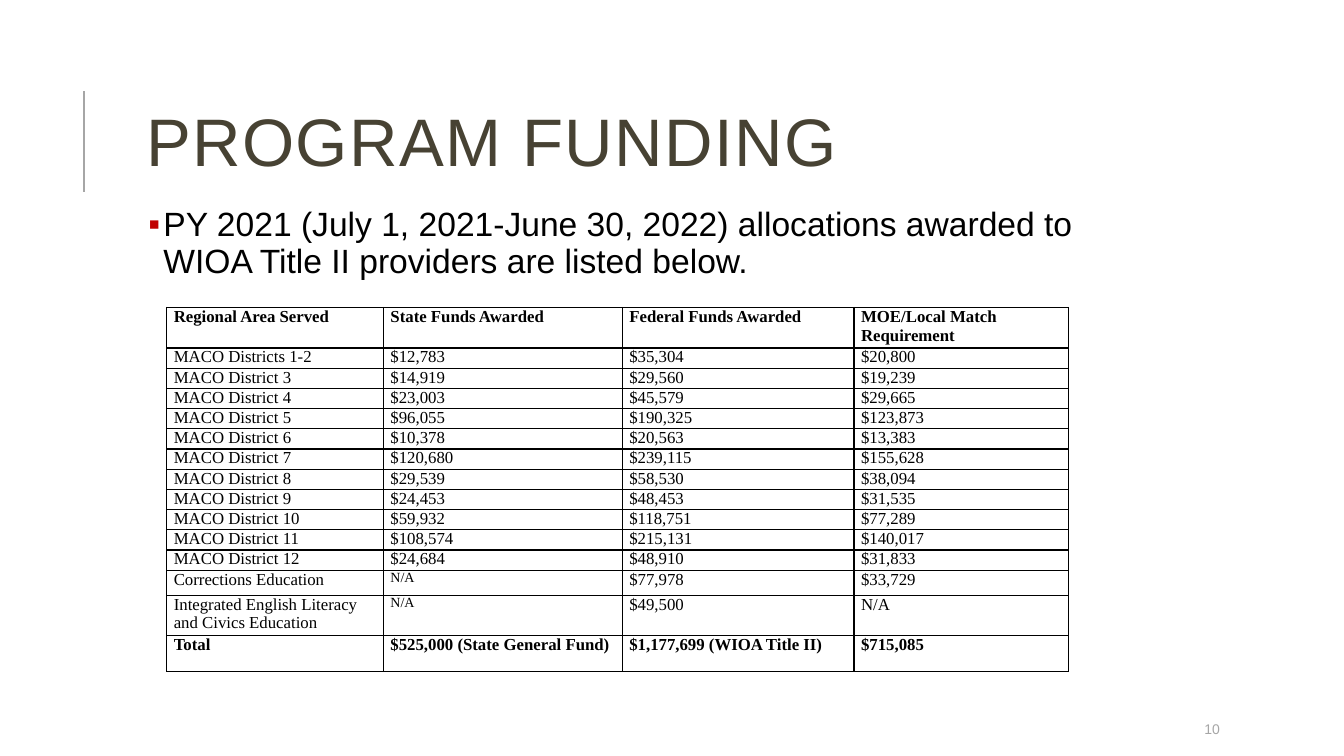
from lxml import etree
from pptx import Presentation
from pptx.dml.color import RGBColor
from pptx.enum.shapes import MSO_CONNECTOR
from pptx.enum.text import MSO_ANCHOR, MSO_AUTO_SIZE, PP_ALIGN
from pptx.oxml import parse_xml
from pptx.oxml.ns import nsdecls, qn
from pptx.util import Cm, Pt

STRAIGHT = MSO_CONNECTOR.STRAIGHT
MIDDLE = MSO_ANCHOR.MIDDLE
TOP = MSO_ANCHOR.TOP
LEFT = PP_ALIGN.LEFT
NO_AUTOFIT = MSO_AUTO_SIZE.NONE

BLACK = RGBColor(0x00, 0x00, 0x00)
BROWN = RGBColor(0x47, 0x42, 0x33)
GRAY = RGBColor(0xA6, 0xA6, 0xA6)

FUNDING = [
    ("Regional Area Served", "State Funds Awarded", "Federal Funds Awarded",
     "MOE/Local Match Requirement"),
    ("MACO Districts 1-2", "$12,783", "$35,304", "$20,800"),
    ("MACO District 3", "$14,919", "$29,560", "$19,239"),
    ("MACO District 4", "$23,003", "$45,579", "$29,665"),
    ("MACO District 5", "$96,055", "$190,325", "$123,873"),
    ("MACO District 6", "$10,378", "$20,563", "$13,383"),
    ("MACO District 7", "$120,680", "$239,115", "$155,628"),
    ("MACO District 8", "$29,539", "$58,530", "$38,094"),
    ("MACO District 9", "$24,453", "$48,453", "$31,535"),
    ("MACO District 10", "$59,932", "$118,751", "$77,289"),
    ("MACO District 11", "$108,574", "$215,131", "$140,017"),
    ("MACO District 12", "$24,684", "$48,910", "$31,833"),
    ("Corrections Education", "N/A", "$77,978", "$33,729"),
    ("Integrated English Literacy and Civics Education", "N/A", "$49,500", "N/A"),
    ("Total", "$525,000 (State General Fund)", "$1,177,699 (WIOA Title II)",
     "$715,085"),
]
COLUMN_WIDTHS = [5.46, 6.02, 5.84, 5.41]
ROW_HEIGHTS = [0.91] + [0.46] * 11 + [0.63, 0.91, 0.91]


def add_run(paragraph, text, font_name, size, color, bold=False):
    run = paragraph.add_run()
    run.text = text
    run.font.name = font_name
    run.font.size = Pt(size)
    run.font.color.rgb = color
    run.font.bold = bold
    return run


presentation = Presentation()
presentation.slide_width = Cm(33.87)
presentation.slide_height = Cm(19.05)
slide = presentation.slides.add_slide(presentation.slide_layouts[5])

# Accent line beside the title
accent = slide.shapes.add_connector(STRAIGHT, Cm(2.12), Cm(4.83), Cm(2.12), Cm(2.3))
accent.line.color.rgb = GRAY
accent.line.width = Pt(1.75)
etree.SubElement(accent._element.spPr, qn("a:effectLst"))

# Title
title = slide.shapes.title
title.left, title.top, title.width, title.height = Cm(3.43), Cm(1.63), Cm(27), Cm(4.17)
title.text_frame.auto_size = NO_AUTOFIT
title.text_frame.vertical_anchor = MIDDLE
paragraph = title.text_frame.paragraphs[0]
paragraph.alignment = LEFT
paragraph.line_spacing = 0.8
run = add_run(paragraph, "PROGRAM FUNDING", "Arial", 48, BROWN)
run._r.get_or_add_rPr().set("spc", "100")

# Bulleted introduction
intro = slide.shapes.add_textbox(Cm(3.25), Cm(5.11), Cm(24.13), Cm(11.86))
frame = intro.text_frame
frame.word_wrap = True
frame.margin_left = frame.margin_right = frame.margin_top = frame.margin_bottom = Cm(0.13)
paragraph = frame.paragraphs[0]
properties = paragraph._p.get_or_add_pPr()
properties.set("marL", str(Cm(0.74)))
properties.set("indent", str(Cm(-0.38)))
bullet_color = etree.SubElement(properties, qn("a:buClr"))
etree.SubElement(bullet_color, qn("a:srgbClr"), val="C00000")
etree.SubElement(properties, qn("a:buFont"), typeface="Arial")
etree.SubElement(properties, qn("a:buChar"), char="▪")
paragraph.line_spacing = 0.9
paragraph.space_after = Pt(4)
add_run(paragraph, "PY 2021 (July 1, 2021-June 30, 2022) allocations awarded to "
        "WIOA Title II providers are listed below.", "Arial", 24, BLACK)

# Funding table
table = slide.shapes.add_table(
    len(FUNDING), len(COLUMN_WIDTHS), Cm(4.2), Cm(7.75),
    Cm(sum(COLUMN_WIDTHS)), Cm(sum(ROW_HEIGHTS))).table
table.first_row = False
table.horz_banding = False
for column, width in zip(table.columns, COLUMN_WIDTHS):
    column.width = Cm(width)
for row, height in zip(table.rows, ROW_HEIGHTS):
    row.height = Cm(height)

for row_index, values in enumerate(FUNDING):
    bold = row_index in (0, len(FUNDING) - 1)
    for column_index, value in enumerate(values):
        cell = table.cell(row_index, column_index)
        cell.margin_left = cell.margin_right = Cm(0.18)
        cell.margin_top = cell.margin_bottom = 0
        cell.vertical_anchor = TOP
        size = 10 if value == "N/A" and column_index == 1 else 12
        add_run(cell.text_frame.paragraphs[0], value, "Times New Roman", size, BLACK, bold)
        for side in ("lnL", "lnR", "lnT", "lnB"):
            cell._tc.get_or_add_tcPr().append(parse_xml(
                f'<a:{side} {nsdecls("a")} w="{Pt(1)}"><a:solidFill>'
                f'<a:srgbClr val="{BLACK}"/></a:solidFill></a:{side}>'))
        cell.fill.background()

# Slide number
number = slide.shapes.add_textbox(Cm(30.1), Cm(17.98), Cm(2.69), Cm(0.76))
number.text_frame.word_wrap = True
number.text_frame.vertical_anchor = MIDDLE
add_run(number.text_frame.paragraphs[0], "10", "Arial", 10, GRAY)

presentation.save("out.pptx")
